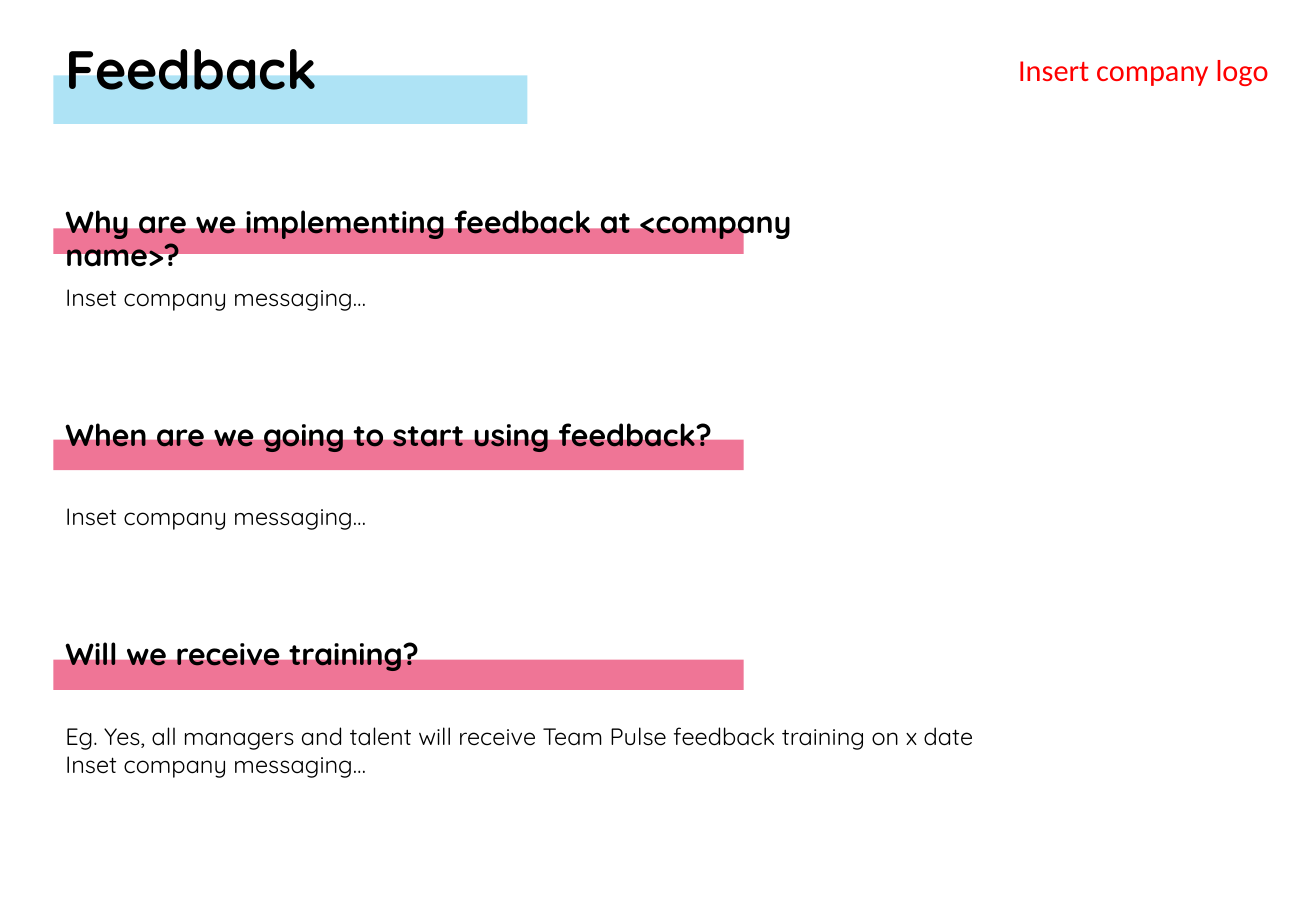
import dataclasses

import pptx
import pptx.dml.color
import pptx.enum.shapes
import pptx.enum.text
import pptx.oxml.ns
import pptx.util
from lxml import etree

EMU_PER_PX = 9144
LEFT = 44
HEADING_BAR_WIDTH = 568
LINE_HEIGHT = 34
MESSAGE_WIDTH = 994

BLACK = pptx.dml.color.RGBColor(0x00, 0x00, 0x00)
RED = pptx.dml.color.RGBColor(0xFF, 0x00, 0x00)
SKY = pptx.dml.color.RGBColor(0x36, 0xBB, 0xE8)
PINK = pptx.dml.color.RGBColor(0xE5, 0x1A, 0x50)


@dataclasses.dataclass(frozen=True)
class Box:
    left: int
    top: int
    width: int
    height: int

    def emu(self) -> list[int]:
        return [px * EMU_PER_PX for px in dataclasses.astuple(self)]


@dataclasses.dataclass(frozen=True)
class Question:
    heading: str
    heading_box: Box
    bar_box: Box
    messages: tuple[str, ...]
    message_box: Box


QUESTIONS = (
    Question(
        "Why are we implementing feedback at <company name>?",
        Box(LEFT, 166, 712, LINE_HEIGHT),
        Box(LEFT, 188, HEADING_BAR_WIDTH, 21),
        ("Inset company messaging…",),
        Box(LEFT, 228, MESSAGE_WIDTH, LINE_HEIGHT),
    ),
    Question(
        "When are we going to start using feedback?",
        Box(LEFT, 341, 606, LINE_HEIGHT),
        Box(LEFT, 362, HEADING_BAR_WIDTH, 25),
        ("Inset company messaging…",),
        Box(LEFT, 408, MESSAGE_WIDTH, LINE_HEIGHT),
    ),
    Question(
        "Will we receive training?",
        Box(LEFT, 521, 606, LINE_HEIGHT),
        Box(LEFT, 543, HEADING_BAR_WIDTH, 25),
        (
            "Eg. Yes, all managers and talent will receive Team Pulse feedback training on x date",
            "Inset company messaging…",
        ),
        Box(LEFT, 589, MESSAGE_WIDTH, 57),
    ),
)


def write_text(frame, lines: tuple[str, ...], *, size: int, font: str = "Quicksand",
               color=BLACK, bold: bool = False, spacing: float = 1.0,
               wrap: bool = True, anchor=pptx.enum.text.MSO_ANCHOR.TOP) -> None:
    frame.word_wrap = wrap
    frame.auto_size = pptx.enum.text.MSO_AUTO_SIZE.NONE
    frame.vertical_anchor = anchor
    for index, line in enumerate(lines):
        paragraph = frame.add_paragraph() if index else frame.paragraphs[0]
        paragraph.alignment = pptx.enum.text.PP_ALIGN.LEFT
        paragraph.line_spacing = spacing
        run = paragraph.add_run()
        run.text = line
        run.font.name = font
        run.font.size = pptx.util.Pt(size)
        run.font.bold = bold
        run.font.color.rgb = color


def add_bar(slide, box: Box, color, opacity: int):
    bar = slide.shapes.add_shape(pptx.enum.shapes.MSO_SHAPE.RECTANGLE, *box.emu())
    bar.shadow.inherit = False
    bar.line.fill.background()
    bar.fill.solid()
    bar.fill.fore_color.rgb = color
    rgb = next(bar.element.iter(pptx.oxml.ns.qn("a:srgbClr")))
    etree.SubElement(rgb, pptx.oxml.ns.qn("a:alpha"), val=str(opacity * 1000))
    return bar


def add_text(slide, box: Box, lines: tuple[str, ...], **text_format) -> None:
    write_text(slide.shapes.add_textbox(*box.emu()).text_frame, lines, **text_format)


def add_title(slide) -> None:
    title = slide.shapes.title
    title.left, title.top, title.width, title.height = Box(LEFT, 26, 576, 62).emu()
    write_text(title.text_frame, ("Feedback",), size=32, bold=True, spacing=0.9,
               anchor=pptx.enum.text.MSO_ANCHOR.BOTTOM)
    title_bar = add_bar(slide, Box(LEFT, 62, 390, 40), SKY, 40)
    title.element.addprevious(title_bar.element)


def add_question(slide, question: Question) -> None:
    add_bar(slide, question.bar_box, PINK, 60)
    add_text(slide, question.heading_box, (question.heading,),
             size=18, bold=True, spacing=0.9)
    add_text(slide, question.message_box, question.messages, size=14)


def main() -> None:
    presentation = pptx.Presentation()
    presentation.slide_width = 1083 * EMU_PER_PX
    presentation.slide_height = 750 * EMU_PER_PX
    slide = presentation.slides.add_slide(presentation.slide_layouts[5])
    add_title(slide)
    for question in QUESTIONS:
        add_question(slide, question)
    add_text(slide, Box(828, 37, 229, 40), ("Insert company logo",),
             size=18, font="Calibri", color=RED, wrap=False)
    presentation.save("out.pptx")


if __name__ == "__main__":
    main()
